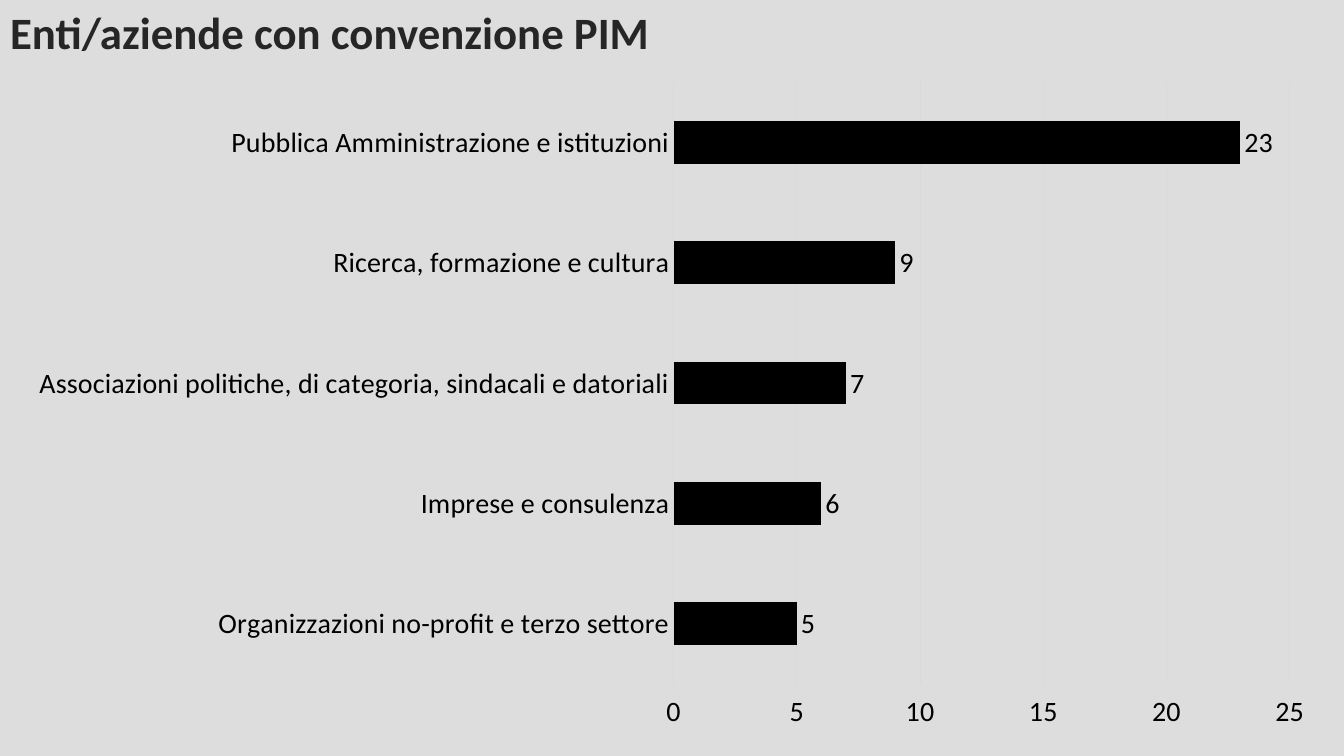
from dataclasses import dataclass

from pptx import Presentation
from pptx.chart.chart import Chart
from pptx.chart.data import CategoryChartData
from pptx.dml.color import RGBColor
from pptx.enum.chart import XL_CHART_TYPE as ChartType
from pptx.enum.chart import XL_LABEL_POSITION as LabelPosition
from pptx.enum.chart import XL_TICK_LABEL_POSITION as TickLabelPosition
from pptx.enum.chart import XL_TICK_MARK as TickMark
from pptx.enum.text import MSO_ANCHOR as Anchor
from pptx.enum.text import MSO_AUTO_SIZE as AutoSize
from pptx.enum.text import PP_ALIGN as Align
from pptx.slide import Slide
from pptx.text.text import Font
from pptx.util import Cm, Pt

BACKGROUND = RGBColor(0xDD, 0xDD, 0xDD)
TITLE_COLOR = RGBColor(0x26, 0x26, 0x26)
BLACK = RGBColor(0, 0, 0)
GRID_COLOR = RGBColor(0xD9, 0xD9, 0xD9)


@dataclass(frozen=True)
class Sector:
    name: str
    agreements: int


SECTORS = (
    Sector("Pubblica Amministrazione e istituzioni", 23),
    Sector("Ricerca, formazione e cultura", 9),
    Sector("Associazioni politiche, di categoria, sindacali e datoriali", 7),
    Sector("Imprese e consulenza", 6),
    Sector("Organizzazioni no-profit e terzo settore", 5),
)


def apply_format(target: object, values: dict[str, object]) -> None:
    for name, value in values.items():
        setattr(target, name, value)


def format_font(font: Font, size: int, color: RGBColor, bold: bool) -> None:
    apply_format(font, {"name": "Calibri", "size": Pt(size), "bold": bold})
    font.color.rgb = color


def add_title(page: Slide, text: str) -> None:
    box = page.shapes.title
    apply_format(box, {"left": 0, "top": 0, "width": Cm(33.53), "height": Cm(19.05)})
    frame = box.text_frame
    apply_format(frame, {"vertical_anchor": Anchor.TOP, "word_wrap": True,
                         "auto_size": AutoSize.NONE})
    para = frame.paragraphs[0]
    apply_format(para, {"alignment": Align.LEFT, "space_before": Pt(10)})
    span = para.add_run()
    span.text = text
    format_font(span.font, 32, TITLE_COLOR, True)


def format_axes(chart: Chart) -> None:
    categories, values = chart.category_axis, chart.value_axis
    for axis in (categories, values):
        apply_format(axis, {"major_tick_mark": TickMark.NONE,
                            "minor_tick_mark": TickMark.NONE})
        format_font(axis.tick_labels.font, 20, BLACK, False)
    categories.reverse_order = True
    apply_format(values, {"minimum_scale": 0, "maximum_scale": 25, "major_unit": 5,
                          "tick_label_position": TickLabelPosition.HIGH})
    values.format.line.fill.background()
    for line in (categories.format.line, values.major_gridlines.format.line):
        line.color.rgb = GRID_COLOR
        line.width = Pt(0.75)


def add_sector_chart(page: Slide, sectors: tuple[Sector, ...]) -> None:
    table = CategoryChartData()
    table.categories = [sector.name for sector in sectors]
    table.add_series("Series 1", [sector.agreements for sector in sectors])
    chart = page.shapes.add_chart(
        ChartType.BAR_CLUSTERED, Cm(0.33), Cm(1.73), Cm(33.2), Cm(16.97), table
    ).chart
    apply_format(chart, {"has_legend": False, "has_title": False})
    format_font(chart.font, 20, BLACK, False)
    plot = chart.plots[0]
    apply_format(plot, {"gap_width": 182, "vary_by_categories": False,
                        "has_data_labels": True})
    apply_format(plot.data_labels, {"show_value": True,
                                    "position": LabelPosition.OUTSIDE_END})
    format_font(plot.data_labels.font, 20, BLACK, False)
    bars = plot.series[0].format.fill
    bars.solid()
    bars.fore_color.rgb = BLACK
    format_axes(chart)


def main() -> None:
    deck = Presentation()
    apply_format(deck, {"slide_width": Cm(33.87), "slide_height": Cm(19.05)})
    page = deck.slides.add_slide(deck.slide_layouts[5])
    background = page.background.fill
    background.solid()
    background.fore_color.rgb = BACKGROUND
    add_title(page, "Enti/aziende con convenzione PIM")
    add_sector_chart(page, SECTORS)
    deck.save("out.pptx")


if __name__ == "__main__":
    main()
